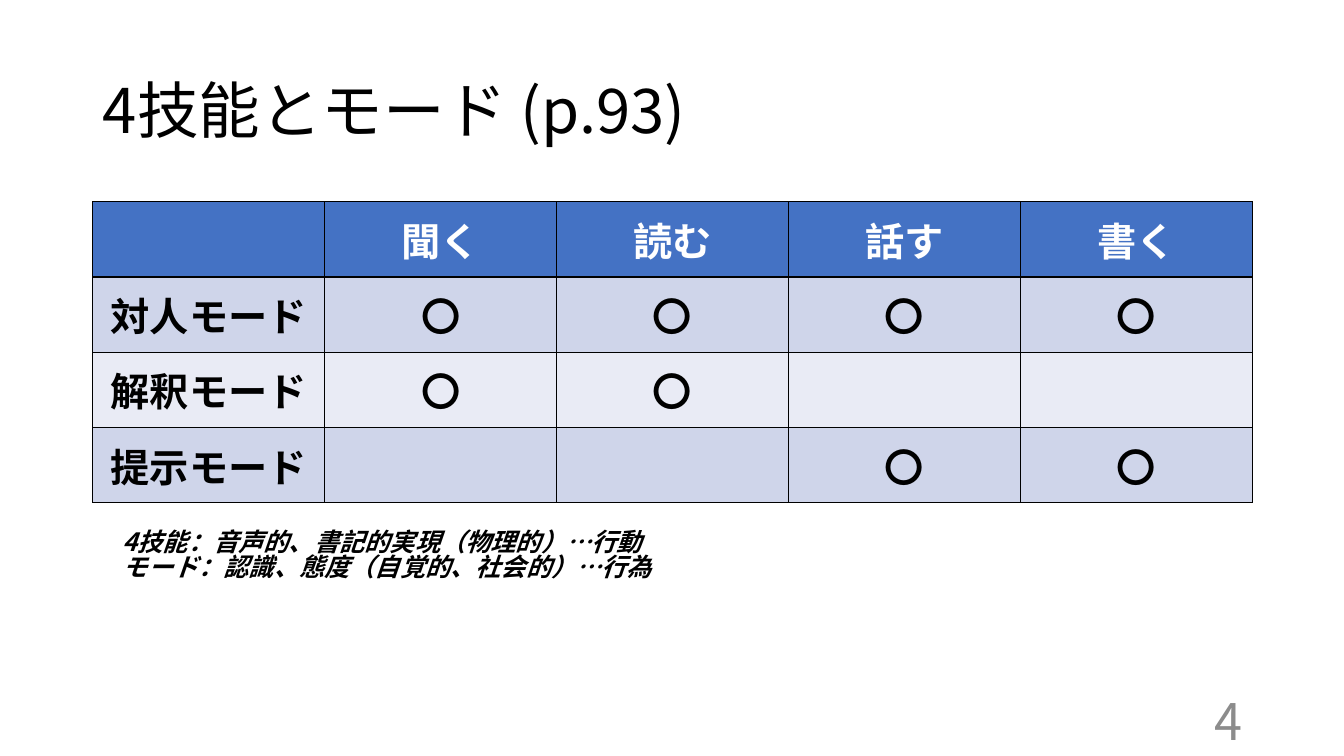
from lxml import etree
from pptx import Presentation
from pptx.dml.color import RGBColor
from pptx.enum.text import MSO_ANCHOR, PP_ALIGN
from pptx.oxml.ns import qn
from pptx.util import Inches, Pt

FONT = "Noto Sans CJK JP"
COLORS = {
    "text": "000000",
    "header_text": "FFFFFF",
    "header": "4472C4",
    "band_dark": "CFD5EA",
    "band_light": "E9EBF5",
    "border": "000000",
    "number": "8C8C8C",
}
SKILLS = ["聞く", "読む", "話す", "書く"]
MODES = {
    "対人モード": ["聞く", "読む", "話す", "書く"],
    "解釈モード": ["聞く", "読む"],
    "提示モード": ["話す", "書く"],
}
NOTES = [
    "4技能：音声的、書記的実現（物理的）…行動",
    "モード：認識、態度（自覚的、社会的）…行為",
]


def color(name):
    return RGBColor.from_string(COLORS[name])


def format_text(text_frame, size, color_name, bold=False, italic=False,
                align=PP_ALIGN.LEFT, line_spacing=None):
    for paragraph in text_frame.paragraphs:
        paragraph.alignment = align
        paragraph.line_spacing = line_spacing
        for run in paragraph.runs:
            font = run.font
            font.name, font.size = FONT, Pt(size)
            font.bold, font.italic = bold, italic
            font.color.rgb = color(color_name)
            east_asian = etree.SubElement(font._element, qn("a:ea"))
            east_asian.set("typeface", FONT)


def add_title(slide, text):
    title = slide.shapes.title
    title.left, title.top = Inches(0.92), Inches(0.4)
    title.width, title.height = Inches(11.5), Inches(1.45)
    title.text_frame.text = text
    title.text_frame.vertical_anchor = MSO_ANCHOR.MIDDLE
    format_text(title.text_frame, 44, "text", line_spacing=0.9)


def add_text(slide, box, text, anchor=MSO_ANCHOR.TOP, **style):
    shape = slide.shapes.add_textbox(*(Inches(length) for length in box))
    text_frame = shape.text_frame
    text_frame.word_wrap = True
    text_frame.vertical_anchor = anchor
    text_frame.text = text
    format_text(text_frame, **style)


def add_borders(cell):
    properties = cell._tc.get_or_add_tcPr()
    for position, side in enumerate(("a:lnL", "a:lnR", "a:lnT", "a:lnB")):
        line = etree.Element(qn(side), w=str(Pt(1)))
        fill = etree.SubElement(line, qn("a:solidFill"))
        etree.SubElement(fill, qn("a:srgbClr"), val=COLORS["border"])
        properties.insert(position, line)


def add_mode_table(slide):
    rows = [["", *SKILLS]]
    for mode, skills in MODES.items():
        rows.append([mode, *("〇" if skill in skills else "" for skill in SKILLS)])

    frame = slide.shapes.add_table(
        len(rows), len(rows[0]),
        Inches(0.92), Inches(2), Inches(11.5), Inches(2.99))
    fills = ["header", "band_dark", "band_light", "band_dark"]
    for row, texts, fill in zip(frame.table.rows, rows, fills):
        text_color = "header_text" if fill == "header" else "text"
        for cell, text in zip(row.cells, texts):
            cell.text = text
            cell.vertical_anchor = MSO_ANCHOR.MIDDLE
            cell.fill.solid()
            cell.fill.fore_color.rgb = color(fill)
            format_text(cell.text_frame, 28, text_color, bold=True,
                        align=PP_ALIGN.CENTER)
            add_borders(cell)


def main():
    presentation = Presentation()
    presentation.slide_width = Inches(13.33)
    presentation.slide_height = Inches(7.5)
    slide = presentation.slides.add_slide(presentation.slide_layouts[5])

    # Title and table of skills by mode
    add_title(slide, "4技能とモード (p.93)")
    add_mode_table(slide)

    # Notes below the table
    add_text(slide, (1.12, 5.22, 10.22, 0.71), "\n".join(NOTES), size=18,
             color_name="text", bold=True, italic=True, line_spacing=0.83)

    # Slide number
    add_text(slide, (9.42, 6.95, 3, 0.4), "4", anchor=MSO_ANCHOR.MIDDLE,
             size=36, color_name="number", align=PP_ALIGN.RIGHT)

    presentation.save("out.pptx")


if __name__ == "__main__":
    main()
